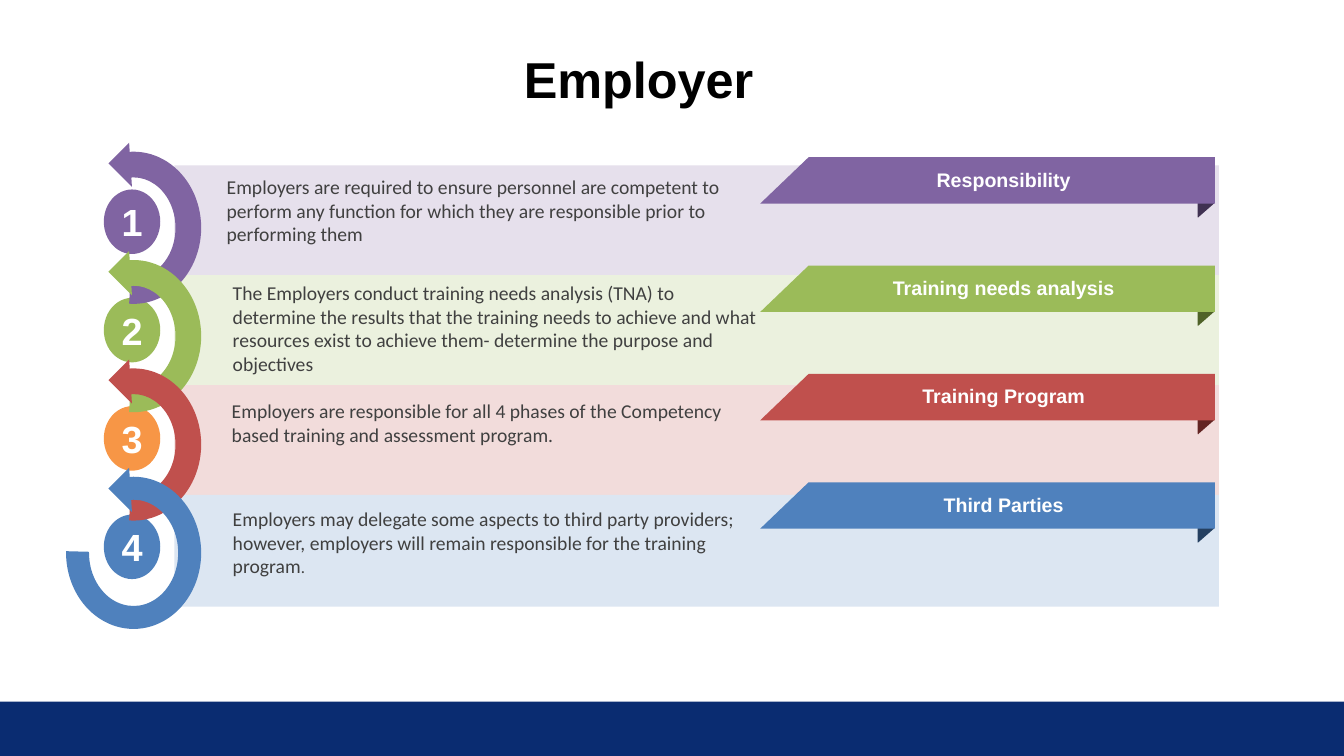
from pptx import Presentation
from pptx import util as u
from pptx.dml.color import RGBColor
from pptx.enum import shapes, text

WHITE = RGBColor(0xFF, 0xFF, 0xFF)
BLACK = RGBColor(0x00, 0x00, 0x00)
GREY = RGBColor(0x40, 0x40, 0x40)
NAVY = RGBColor(0x0A, 0x2C, 0x71)
PURPLE = RGBColor(0x80, 0x64, 0xA2)
GREEN = RGBColor(0x9B, 0xBB, 0x59)
RED = RGBColor(0xC0, 0x50, 0x4D)
ORANGE = RGBColor(0xF7, 0x96, 0x46)
BLUE = RGBColor(0x4F, 0x81, 0xBD)
BAND_COLORS = [
    RGBColor(0xE6, 0xE0, 0xEC),
    RGBColor(0xEB, 0xF1, 0xDE),
    RGBColor(0xF2, 0xDC, 0xDB),
    RGBColor(0xDC, 0xE6, 0xF2),
]
DISC_COLORS = [PURPLE, GREEN, ORANGE, BLUE]
MAIN_COLORS = [PURPLE, GREEN, RED, BLUE]
FOLD_COLORS = [
    RGBColor(0x40, 0x31, 0x52),
    RGBColor(0x4F, 0x62, 0x28),
    RGBColor(0x63, 0x25, 0x23),
    RGBColor(0x25, 0x40, 0x61),
]
BAND_STEP = 1.09
STEP = 1.075

DUTIES = [
    (2.15, 1.69, 5.49, 0.81, "Employers are required to ensure personnel are competent to "
     "perform any function for which they are responsible prior to performing them"),
    (2.21, 2.74, 5.41, 1.04, "The Employers conduct training needs analysis (TNA) to determine "
     "the results that the training needs to achieve and what resources exist to achieve them- "
     "determine the purpose and objectives"),
    (2.2, 3.91, 5.41, 0.57, "Employers are responsible for all 4 phases of the Competency "
     "based training and assessment program."),
    (2.21, 4.98, 5.41, 0.81, "Employers may delegate some aspects to third party providers; "
     "however, employers will remain responsible for the training program"),
]
HEADINGS = ["Responsibility", "Training needs analysis", "Training Program", "Third Parties"]
FOLD_POINTS = [(11.87, 1.58), (12.04, 1.57), (12.04, 2.02), (11.88, 2.16)]
RIBBON_POINTS = [(12.05, 1.56), (8.02, 1.56), (7.54, 2.02), (12.05, 2.02)]

presentation = Presentation()
presentation.slide_width = u.Inches(13.33)
presentation.slide_height = u.Inches(7.5)
slide = presentation.slides.add_slide(presentation.slide_layouts[6])


def add_filled(kind, left, top, width, height, color):
    shape = slide.shapes.add_shape(
        kind, u.Inches(left), u.Inches(top), u.Inches(width), u.Inches(height))
    shape.shadow.inherit = False
    shape.fill.solid()
    shape.fill.fore_color.rgb = color
    shape.line.fill.background()
    return shape


def add_text(left, top, width, height, words, size, color, font="Arial", centred=True):
    box = slide.shapes.add_textbox(
        u.Inches(left), u.Inches(top), u.Inches(width), u.Inches(height))
    frame = box.text_frame
    frame.word_wrap = True
    frame.text = words
    paragraph = frame.paragraphs[0]
    if centred:
        paragraph.alignment = text.PP_ALIGN.CENTER
        frame.vertical_anchor = text.MSO_ANCHOR.MIDDLE
    run = paragraph.runs[0]
    run.font.name = font
    run.font.size = u.Pt(size)
    run.font.bold = centred
    run.font.color.rgb = color
    return paragraph


add_filled(shapes.MSO_SHAPE.RECTANGLE, 0, 6.96, 13.33, 0.54, NAVY)

for row, color in enumerate(BAND_COLORS):
    add_filled(shapes.MSO_SHAPE.RECTANGLE, 1.73, 1.64 + row * BAND_STEP, 10.36, 1.11, color)

for row, color in enumerate(DISC_COLORS):
    offset = row * STEP
    add_filled(shapes.MSO_SHAPE.OVAL, 1.03, 1.88 + offset, 0.56, 0.64, color)
    add_text(1.08, 1.92 + offset, 0.46, 0.56, str(row + 1), 27, WHITE)

for row, color in enumerate(MAIN_COLORS):
    offset = row * STEP
    arc = add_filled(shapes.MSO_SHAPE.BLOCK_ARC, 0.57, 1.59 + offset, 1.51, 1.34, color)
    arc.rotation = 90
    is_last = row == len(MAIN_COLORS) - 1
    arc.adjustments[0] = 104.73
    arc.adjustments[1] = 54.83 if is_last else 2.03
    arc.adjustments[2] = 0.17 if is_last else 0.19
    arrowhead = add_filled(
        shapes.MSO_SHAPE.RIGHT_TRIANGLE, 1.13, 1.49 + offset, 0.33, 0.29, color)
    arrowhead.rotation = 45

for left, top, width, height, words in DUTIES:
    duty = add_text(left, top, width, height, words, 14, GREY, "Calibri", False)
full_stop = duty.add_run()
full_stop.text = "."
full_stop.font.name = "Calibri"
full_stop.font.size = u.Pt(12)
full_stop.font.color.rgb = GREY

for row, heading in enumerate(HEADINGS):
    offset = row * STEP
    for points, color in ((FOLD_POINTS, FOLD_COLORS[row]), (RIBBON_POINTS, MAIN_COLORS[row])):
        corners = [(u.Inches(x), u.Inches(y + offset)) for x, y in points]
        builder = slide.shapes.build_freeform(*corners[0])
        builder.add_line_segments(corners[1:], close=True)
        ribbon = builder.convert_to_shape()
        ribbon.shadow.inherit = False
        ribbon.fill.solid()
        ribbon.fill.fore_color.rgb = color
        ribbon.line.fill.background()
    add_text(8.32, 1.61 + offset, 3.27, 0.34, heading, 14, WHITE)

add_text(3, 0.42, 6.67, 0.71, "Employer", 36, BLACK)

presentation.save("out.pptx")
